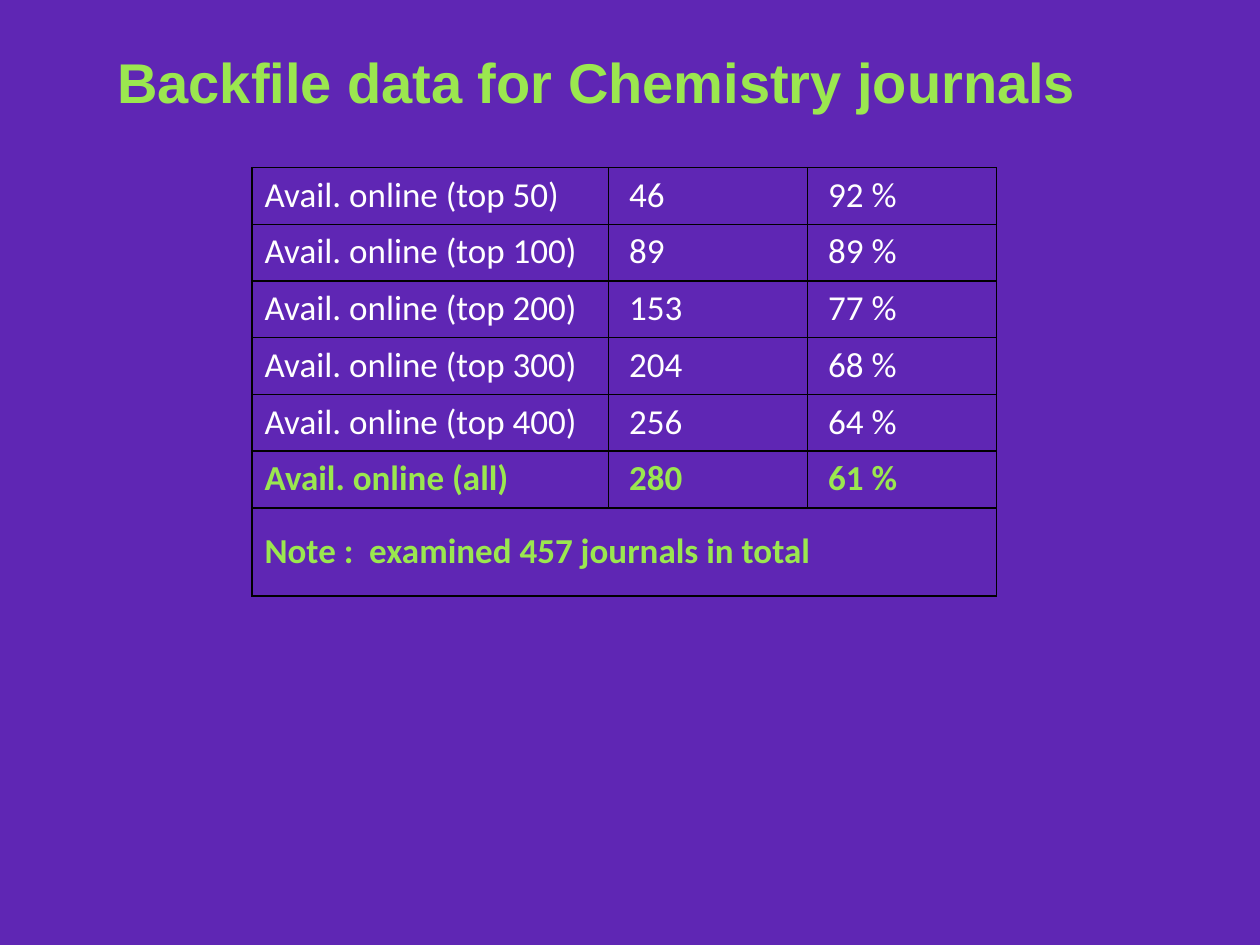
"""Build a slide with a table of online backfile availability."""
import lxml.etree
import pptx
import pptx.dml.color
import pptx.enum.text
import pptx.oxml.ns
import pptx.util
from pptx.util import Inches

COLORS = {"background": "5F26B4", "accent": "9BE74F", "text": "FFFFFF", "border": "000000"}
COLUMN_WIDTHS = (2.83, 1.58, 1.5)
ROW_HEIGHT = 0.45
NOTE_HEIGHT = 0.7
AVAILABILITY = (
    ("top 50", 46, 92),
    ("top 100", 89, 89),
    ("top 200", 153, 77),
    ("top 300", 204, 68),
    ("top 400", 256, 64),
    ("all", 280, 61),
)
NOTE = "Note :  examined 457 journals in total"


def rgb(name):
    return pptx.dml.color.RGBColor.from_string(COLORS[name])


def write_text(text_frame, text, *, size=20, font="Calibri", color="text", bold=False):
    paragraph = text_frame.paragraphs[0]
    paragraph.alignment = pptx.enum.text.PP_ALIGN.LEFT
    run = paragraph.add_run()
    run.text = text
    run.font.name = font
    run.font.size = pptx.util.Pt(size)
    run.font.bold = bold
    run.font.color.rgb = rgb(color)


def add_borders(cell):
    properties = cell._tc.get_or_add_tcPr()
    qn = pptx.oxml.ns.qn
    for side in ("lnL", "lnR", "lnT", "lnB"):
        line = lxml.etree.SubElement(properties, qn(f"a:{side}"), w=str(pptx.util.Pt(1)))
        fill = lxml.etree.SubElement(line, qn("a:solidFill"))
        lxml.etree.SubElement(fill, qn("a:srgbClr"), val=COLORS["border"])


def format_title(title):
    title.left, title.top = Inches(0.83), Inches(0.33)
    title.width, title.height = Inches(8.17), Inches(0.64)
    text_frame = title.text_frame
    text_frame.word_wrap = True
    text_frame.auto_size = pptx.enum.text.MSO_AUTO_SIZE.SHAPE_TO_FIT_TEXT
    text_frame.vertical_anchor = pptx.enum.text.MSO_ANCHOR.TOP
    write_text(text_frame, "Backfile data for Chemistry journals",
               size=32, font="Arial", color="accent", bold=True)


def add_availability_table(slide):
    row_heights = [ROW_HEIGHT] * len(AVAILABILITY) + [NOTE_HEIGHT]
    table = slide.shapes.add_table(
        len(row_heights), len(COLUMN_WIDTHS), Inches(2), Inches(1.33),
        Inches(sum(COLUMN_WIDTHS)), Inches(sum(row_heights))).table
    table.first_row = table.horz_banding = False
    for column, width in zip(table.columns, COLUMN_WIDTHS):
        column.width = Inches(width)
    for row, height in zip(table.rows, row_heights):
        row.height = Inches(height)
    for cell in table.iter_cells():
        add_borders(cell)
        cell.fill.background()

    for row, (group, count, percent) in zip(table.rows, AVAILABILITY):
        total = group == "all"
        texts = (f"Avail. online ({group})", f" {count}", f" {percent} %")
        for cell, text in zip(row.cells, texts):
            write_text(cell.text_frame, text, color="accent" if total else "text", bold=total)

    last_row = len(AVAILABILITY)
    note = table.cell(last_row, 0)
    note.merge(table.cell(last_row, len(COLUMN_WIDTHS) - 1))
    note.vertical_anchor = pptx.enum.text.MSO_ANCHOR.MIDDLE
    write_text(note.text_frame, NOTE, color="accent", bold=True)


def main():
    presentation = pptx.Presentation()
    presentation.slide_width, presentation.slide_height = Inches(10), Inches(7.5)
    slide = presentation.slides.add_slide(presentation.slide_layouts.get_by_name("Title Only"))
    slide.background.fill.solid()
    slide.background.fill.fore_color.rgb = rgb("background")
    format_title(slide.shapes.title)
    add_availability_table(slide)
    presentation.save("out.pptx")


if __name__ == "__main__":
    main()
